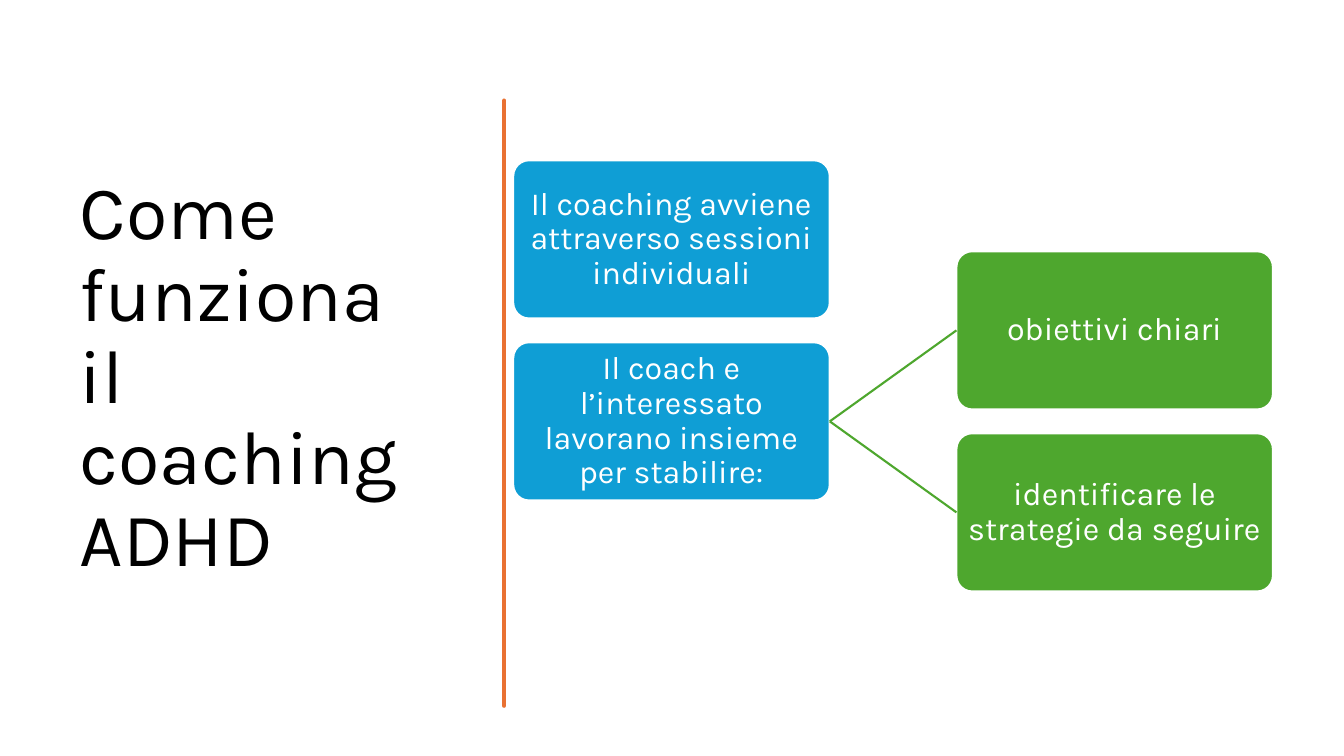
from dataclasses import dataclass

from lxml.etree import SubElement
from pptx import Presentation
from pptx.dml.color import RGBColor
from pptx.enum.shapes import MSO_CONNECTOR, MSO_SHAPE
from pptx.enum.text import MSO_ANCHOR, MSO_AUTO_SIZE, PP_ALIGN
from pptx.oxml.ns import qn
from pptx.util import Inches, Pt

# Content
TITLE = "Come funziona il coaching ADHD"
STEPS = [
    "Il coaching avviene attraverso sessioni individuali",
    "Il coach e l’interessato lavorano insieme per stabilire:",
]
GOALS = ["obiettivi chiari", "identificare le strategie da seguire"]

# Hand-drawn divider: start point, then cubic curves (two controls, end)
DIVIDER_START = (4.75, 0.84)
DIVIDER_CURVES = [
    ((4.77, 1.02), (4.77, 1.19), (4.75, 1.46)),
    ((4.73, 1.73), (4.76, 1.95), (4.75, 2.26)),
    ((4.74, 2.57), (4.75, 2.62), (4.75, 2.94)),
    ((4.74, 3.25), (4.77, 3.42), (4.75, 3.56)),
    ((4.73, 3.70), (4.79, 4.14), (4.75, 4.36)),
    ((4.71, 4.57), (4.72, 4.84), (4.75, 5.10)),
    ((4.77, 5.36), (4.77, 5.64), (4.75, 5.84)),
    ((4.73, 6.03), (4.76, 6.50), (4.75, 6.76)),
    ((4.74, 6.76), (4.73, 6.76), (4.73, 6.76)),
    ((4.74, 6.46), (4.71, 6.44), (4.73, 6.13)),
    ((4.74, 5.83), (4.74, 5.70), (4.73, 5.57)),
    ((4.72, 5.44), (4.72, 4.95), (4.73, 4.77)),
    ((4.73, 4.59), (4.71, 4.45), (4.73, 4.15)),
    ((4.74, 3.86), (4.72, 3.73), (4.73, 3.35)),
    ((4.74, 2.98), (4.72, 2.81), (4.73, 2.50)),
    ((4.74, 2.18), (4.75, 2.00), (4.73, 1.81)),
    ((4.70, 1.63), (4.77, 1.04), (4.73, 0.84)),
]
CURVE_STEPS = 8


@dataclass(frozen=True)
class Theme:
    font: str = "Karla"
    text: RGBColor = RGBColor(0x00, 0x00, 0x00)
    white: RGBColor = RGBColor(0xFF, 0xFF, 0xFF)
    step: RGBColor = RGBColor(0x0F, 0x9E, 0xD5)
    goal: RGBColor = RGBColor(0x4E, 0xA7, 0x2E)
    divider: RGBColor = RGBColor(0xE9, 0x71, 0x32)
    title_size: Pt = Pt(54)
    box_size: Pt = Pt(23)
    line_width: Pt = Pt(1.5)
    divider_width: Pt = Pt(3.25)


THEME = Theme()

# Box grid: goals sit one column to the right and half a row lower
GRID_LEFT, GRID_TOP = 5.09, 1.59
BOX_WIDTH, BOX_HEIGHT = 3.14, 1.57
COLUMN_PITCH = BOX_WIDTH * 1.4
ROW_PITCH = BOX_HEIGHT * 1.15


def write(shape, text, size, color, alignment):
    frame = shape.text_frame
    frame.text = text
    frame.word_wrap = True
    frame.auto_size = MSO_AUTO_SIZE.NONE
    frame.vertical_anchor = MSO_ANCHOR.MIDDLE
    paragraph = frame.paragraphs[0]
    paragraph.alignment = alignment
    paragraph.line_spacing = 0.9
    paragraph.font.name = THEME.font
    paragraph.font.size = size
    paragraph.font.color.rgb = color


def add_title(slide):
    title = slide.shapes.title
    title.left, title.top = Inches(0.69), Inches(0.7)
    title.width, title.height = Inches(3.74), Inches(6.11)
    write(title, TITLE, THEME.title_size, THEME.text, PP_ALIGN.LEFT)


def divider_points():
    start = DIVIDER_START
    for first, second, end in DIVIDER_CURVES:
        for step in range(1, CURVE_STEPS + 1):
            t = step / CURVE_STEPS
            u = 1 - t
            yield tuple(
                u**3 * a + 3 * u * u * t * b + 3 * u * t * t * c + t**3 * d
                for a, b, c, d in zip(start, first, second, end)
            )
        start = end


def add_divider(slide):
    builder = slide.shapes.build_freeform(*DIVIDER_START, scale=Inches(1))
    builder.add_line_segments(list(divider_points()), close=True)
    divider = builder.convert_to_shape()
    divider.shadow.inherit = False
    divider.fill.solid()
    divider.fill.fore_color.rgb = THEME.divider
    divider.line.color.rgb = THEME.divider
    divider.line.width = THEME.divider_width


def add_box(slide, text, column, row, color):
    box = slide.shapes.add_shape(
        MSO_SHAPE.ROUNDED_RECTANGLE,
        Inches(GRID_LEFT + column * COLUMN_PITCH),
        Inches(GRID_TOP + row * ROW_PITCH),
        Inches(BOX_WIDTH),
        Inches(BOX_HEIGHT),
    )
    box.adjustments[0] = 0.1
    box.shadow.inherit = False
    box.fill.solid()
    box.fill.fore_color.rgb = color
    box.line.color.rgb = THEME.white
    box.line.width = THEME.line_width
    frame = box.text_frame
    frame.margin_left = frame.margin_right = Inches(0.02)
    frame.margin_top = frame.margin_bottom = Inches(0.02)
    write(box, text, THEME.box_size, THEME.white, PP_ALIGN.CENTER)
    return box


def add_branch(slide, step, goal):
    branch = slide.shapes.add_connector(MSO_CONNECTOR.STRAIGHT, 0, 0, 0, 0)
    branch.begin_connect(step, 3)  # right side
    branch.end_connect(goal, 1)  # left side
    branch.line.color.rgb = THEME.goal
    branch.line.width = THEME.line_width
    SubElement(branch._element.spPr, qn("a:effectLst"))


def main():
    presentation = Presentation()
    presentation.slide_width = Inches(13.33)
    presentation.slide_height = Inches(7.5)
    slide = presentation.slides.add_slide(presentation.slide_layouts[5])

    add_title(slide)
    add_divider(slide)

    # Steps, with the last one branching into the goals
    steps = [add_box(slide, text, 0, row, THEME.step) for row, text in enumerate(STEPS)]
    for row, text in enumerate(GOALS):
        goal = add_box(slide, text, 1, row + 0.5, THEME.goal)
        add_branch(slide, steps[-1], goal)

    presentation.save("out.pptx")


if __name__ == "__main__":
    main()
